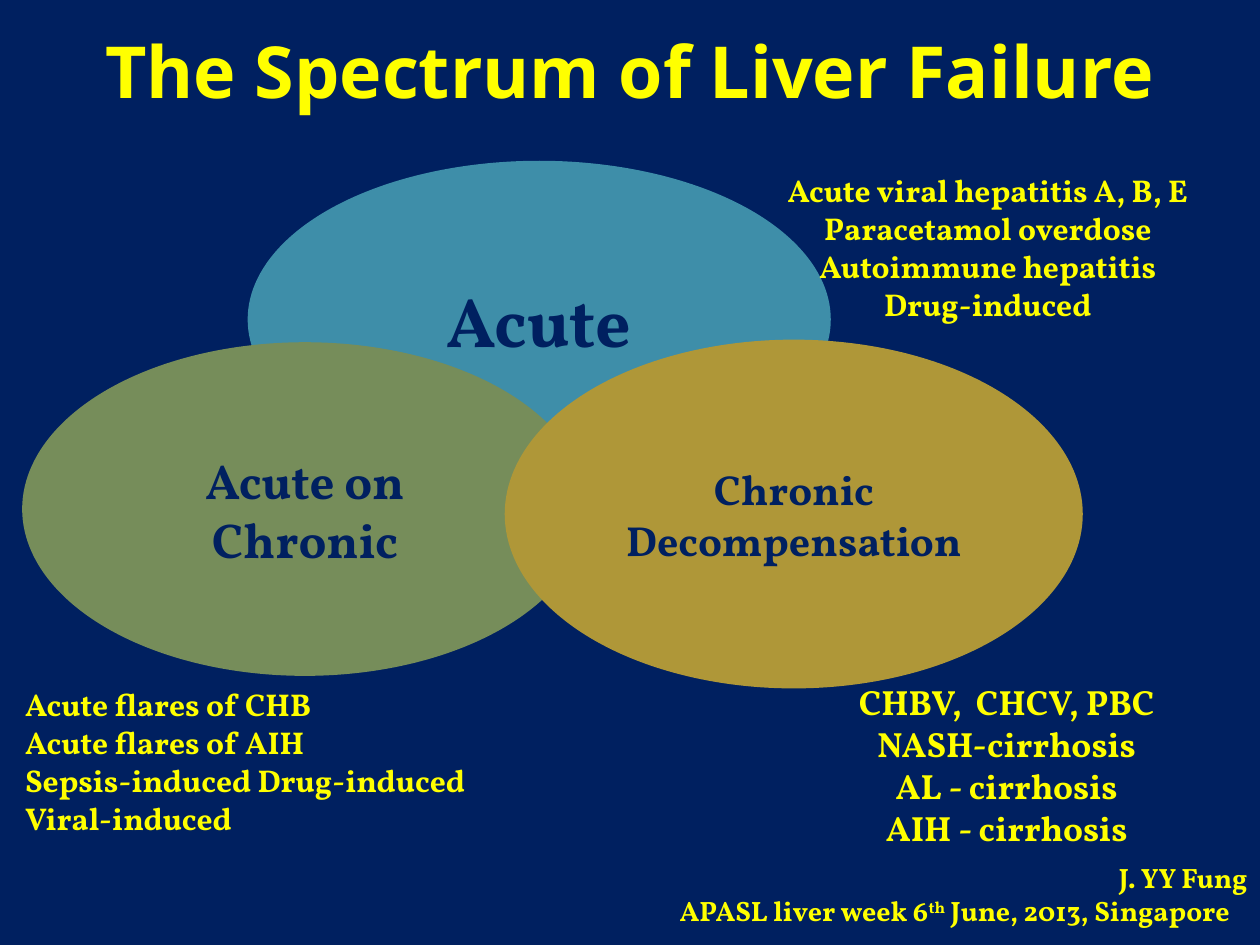
from pptx import Presentation
from pptx.dml.color import RGBColor
from pptx.enum.shapes import MSO_SHAPE
from pptx.enum.text import MSO_ANCHOR as Anchor, MSO_AUTO_SIZE as AutoSize, PP_ALIGN as Align
from pptx.util import Inches, Pt

COLORS = {
    "navy": "002060",
    "yellow": "FFFF00",
    "acute": "3E8EA9",
    "acute_on_chronic": "768D5A",
    "chronic": "AF9738",
}


def color(name):
    return RGBColor.from_string(COLORS[name])


def write_text(frame, paragraphs, size, font="Vollkorn", ink="yellow", align=Align.LEFT):
    """Fill a frame; each paragraph is a string or a list of (text, baseline percent) runs."""
    frame.word_wrap = True
    for index, content in enumerate(paragraphs):
        paragraph = frame.paragraphs[0] if index == 0 else frame.add_paragraph()
        paragraph.alignment = align
        runs = [(content, 0)] if isinstance(content, str) else content
        for text, baseline in runs:
            run = paragraph.add_run()
            run.text = text
            run.font.name = font
            run.font.size = Pt(size)
            run.font.bold = True
            run.font.color.rgb = color(ink)
            if baseline:
                run.font._element.set("baseline", str(baseline * 1000))


class SlideBuilder:
    def __init__(self, presentation):
        self.slide = presentation.slides.add_slide(presentation.slide_layouts[6])
        background = self.slide.background.fill
        background.solid()
        background.fore_color.rgb = color("navy")

    def title(self, text, box):
        shape = self.slide.shapes.add_textbox(*map(Inches, box))
        shape.text_frame.vertical_anchor = Anchor.MIDDLE
        write_text(shape.text_frame, [text], 41, font="Noto Sans", align=Align.CENTER)

    def ellipse(self, text, box, fill, size):
        shape = self.slide.shapes.add_shape(MSO_SHAPE.OVAL, *map(Inches, box))
        shape.shadow.inherit = False
        shape.fill.solid()
        shape.fill.fore_color.rgb = color(fill)
        shape.line.color.rgb = color(fill)
        shape.line.width = Pt(2)
        shape.text_frame.vertical_anchor = Anchor.MIDDLE
        write_text(shape.text_frame, [text], size, ink="navy", align=Align.CENTER)

    def note(self, paragraphs, box, size, align):
        shape = self.slide.shapes.add_textbox(*map(Inches, box))
        write_text(shape.text_frame, paragraphs, size, align=align)
        shape.text_frame.auto_size = AutoSize.SHAPE_TO_FIT_TEXT
        return shape.text_frame


def main():
    presentation = Presentation()
    presentation.slide_width = Inches(10)
    presentation.slide_height = Inches(7.5)

    builder = SlideBuilder(presentation)
    builder.title("The Spectrum of Liver Failure", (0.5, -0.07, 9, 1.25))

    builder.ellipse("Acute", (1.98, 1.29, 4.6, 2.49), "acute", 40)
    builder.ellipse("Acute on Chronic", (0.19, 2.73, 4.46, 2.62), "acute_on_chronic", 28)
    builder.ellipse("Chronic Decompensation", (4.02, 2.71, 4.56, 2.74), "chronic", 24)

    builder.note(
        ["Acute viral hepatitis A, B, E Paracetamol overdose Autoimmune hepatitis Drug-induced"],
        (6.14, 1.31, 3.4, 1.31), 18, Align.CENTER)
    builder.note(
        ["CHBV,  CHCV, PBC", "NASH-cirrhosis", "AL - cirrhosis", "AIH - cirrhosis"],
        (6.48, 5.35, 3.02, 1.45), 20, Align.CENTER)
    builder.note(
        ["Acute flares of CHB", "Acute flares of AIH",
         "Sepsis-induced Drug-induced", "Viral-induced"],
        (0.1, 5.39, 4.11, 1.31), 18, Align.LEFT)

    citation = builder.note(
        ["J. YY Fung",
         [("APASL liver week 6", 0), ("th", 30), (" June, 2013, Singapore", 0)]],
        (4.49, 6.78, 5.51, 0.94), 16, Align.RIGHT)
    properties = citation.paragraphs[1]._p.get_or_add_pPr()
    properties.set("marR", str(Inches(0.14)))

    presentation.save("out.pptx")


if __name__ == "__main__":
    main()
